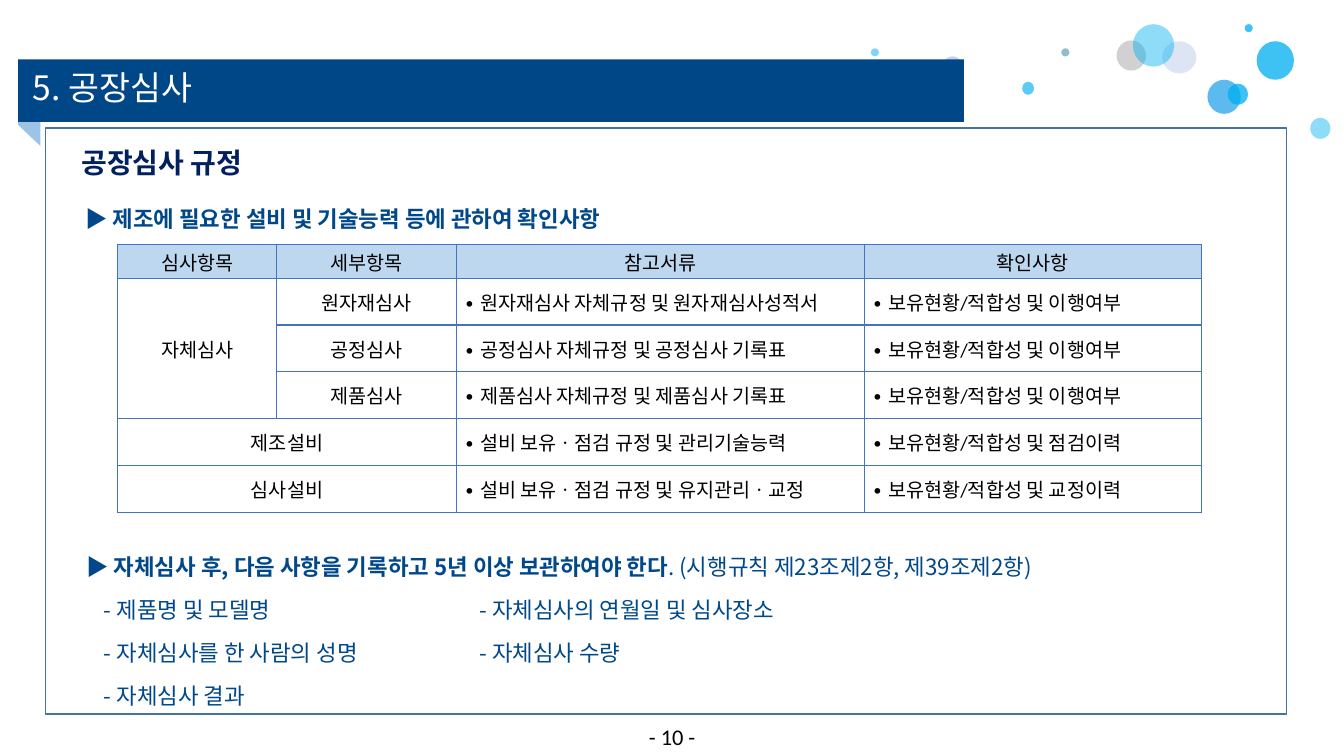
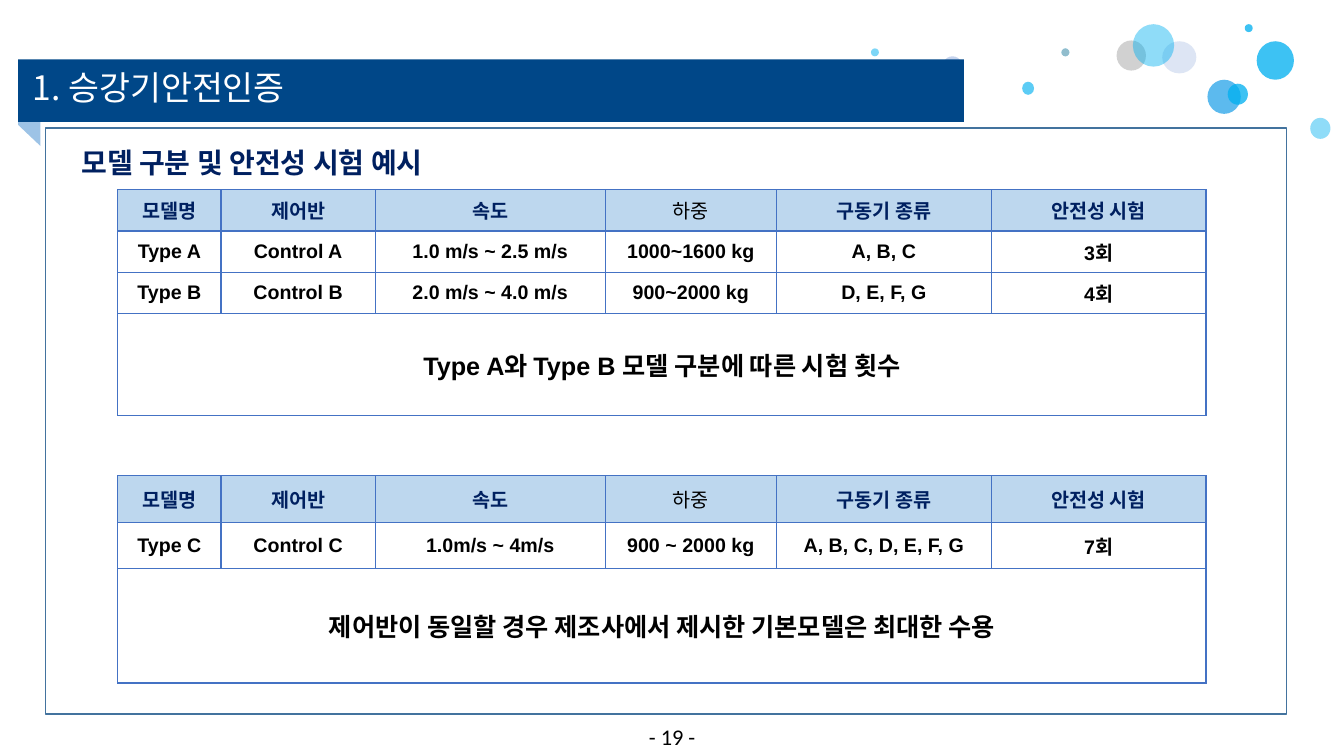
from dataclasses import dataclass, replace

from lxml.etree import SubElement
from pptx import Presentation
from pptx.dml.color import RGBColor
from pptx.enum.shapes import MSO_SHAPE
from pptx.enum.text import MSO_ANCHOR, PP_ALIGN
from pptx.oxml.ns import qn
from pptx.util import Cm, Pt


@dataclass(frozen=True)
class TextStyle:
    size: int
    color: str
    bold: bool = False
    font: str = "Noto Sans CJK KR"
    align: PP_ALIGN = PP_ALIGN.LEFT


class Theme:
    east_asian = "Noto Sans CJK KR"
    band = "004788"
    fold = "9DC3E6"
    frame = "43739E"
    grid = "4472C4"
    header = "BDD7EE"
    sky, azure, steel, gray = "00B0F0", "46B1EC", "8FAADC", "A5A5A5"

    title = TextStyle(24, "FFFFFF")
    subtitle = TextStyle(20, "002060", True)
    point = TextStyle(16, "00488A", True)
    detail = replace(point, bold=False)
    page = TextStyle(16, "000000", font="Calibri", align=PP_ALIGN.CENTER)
    label = replace(page, size=14)
    entry = replace(label, align=PP_ALIGN.JUSTIFY)
    value = replace(label, font="Arial", bold=True)
    heading = replace(value, color="002060")
    verdict = replace(value, size=18)


BUBBLES = [
    (29.29, 1.04, 0.86, 0.81, Theme.steel, 30),
    (23.75, 1.42, 0.51, 0.53, Theme.steel, 51),
    (28.14, 1.02, 0.74, 0.76, Theme.gray, 51),
    (21.95, 1.22, 0.2, 0.2, Theme.sky, 51),
    (30.43, 2.01, 0.84, 0.86, Theme.azure, 88),
    (30.94, 2.11, 0.51, 0.53, Theme.sky, 76),
    (25.76, 2.06, 0.3, 0.33, Theme.sky, 64),
    (31.67, 1.04, 0.94, 0.97, Theme.sky, 76),
    (33.02, 2.97, 0.51, 0.53, Theme.sky, 44),
    (28.55, 0.61, 1.04, 1.07, Theme.sky, 44),
    (31.37, 0.61, 0.2, 0.2, Theme.sky, 76),
    (26.75, 1.22, 0.2, 0.2, Theme.sky, 51),
    (26.75, 1.22, 0.2, 0.2, Theme.gray, 51),
]


class Deck:
    def __init__(self):
        self.presentation = Presentation()
        self.presentation.slide_width = Cm(33.87)
        self.presentation.slide_height = Cm(19.05)
        self.slide = None

    def new_slide(self, title, subtitle, page):
        self.slide = self.presentation.slides.add_slide(
            self.presentation.slide_layouts[6])
        for *box, color, opacity in BUBBLES:
            self.shape(MSO_SHAPE.OVAL, box, color, opacity=opacity)
        self.shape(MSO_SHAPE.RECTANGLE, (1.14, 3.23, 31.29, 14.76),
                   outline=Theme.frame)
        self.text((15.85, 18.11, 2.18, 0.94), [[(f"- {page} -", Theme.page)]])
        self.fold()
        self.shape(MSO_SHAPE.RECTANGLE, (0.46, 1.5, 23.83, 1.57), Theme.band)
        self.text((1.8, 3.53, 23.14, 1.12), [[(subtitle, Theme.subtitle)]])
        self.text((0.58, 1.55, 23.27, 1.27), [[(title, Theme.title)]])

    def paint(self, shape, fill=None, outline=None, opacity=100):
        shape.shadow.inherit = False
        if fill:
            shape.fill.solid()
            shape.fill.fore_color.rgb = RGBColor.from_string(fill)
        else:
            shape.fill.background()
        if outline:
            shape.line.color.rgb = RGBColor.from_string(outline)
            shape.line.width = Pt(1)
        else:
            shape.line.fill.background()
        if opacity < 100:
            color = shape.element.spPr.find(qn("a:solidFill"))[0]
            SubElement(color, qn("a:alpha"), val=str(opacity * 1000))

    def shape(self, kind, box, fill=None, outline=None, opacity=100):
        shape = self.slide.shapes.add_shape(kind, *map(Cm, box))
        self.paint(shape, fill, outline, opacity)

    def fold(self):
        corners = [(Cm(x), Cm(y)) for x, y in
                   [(0.46, 3.15), (1.02, 3.68), (1.02, 2.57), (0.46, 2.57)]]
        builder = self.slide.shapes.build_freeform(*corners[0])
        builder.add_line_segments(corners[1:], close=True)
        self.paint(builder.convert_to_shape(), Theme.fold)

    def set_parts(self, paragraph, parts):
        paragraph.text = parts[0][0]
        for text, _ in parts[1:]:
            paragraph.add_run().text = text
        paragraph.alignment = parts[0][1].align
        for run, (_, style) in zip(paragraph.runs, parts):
            run.font.size = Pt(style.size)
            run.font.bold = style.bold
            run.font.color.rgb = RGBColor.from_string(style.color)
            run.font.name = style.font
            SubElement(run._r.get_or_add_rPr(), qn("a:ea"),
                       typeface=Theme.east_asian)

    def text(self, box, paragraphs, spacing=None, indent=0, tabs=()):
        frame = self.slide.shapes.add_textbox(*map(Cm, box)).text_frame
        frame.word_wrap = True
        for index, parts in enumerate(paragraphs):
            paragraph = frame.add_paragraph() if index else frame.paragraphs[0]
            properties = paragraph._p.get_or_add_pPr()
            if parts[0][0].startswith("\t"):
                stops = SubElement(properties, qn("a:tabLst"))
                for stop in tabs:
                    SubElement(stops, qn("a:tab"), pos=str(Cm(stop)), algn="l")
            elif indent:
                properties.set("marL", str(Cm(indent)))
            self.set_parts(paragraph, parts)
            if spacing:
                paragraph.line_spacing = spacing

    def border(self, cell):
        properties = cell._tc.get_or_add_tcPr()
        for position, side in enumerate(("lnL", "lnR", "lnT", "lnB")):
            line = SubElement(properties, qn(f"a:{side}"), w=str(Pt(1)))
            properties.insert(position, line)
            fill = SubElement(line, qn("a:solidFill"))
            SubElement(fill, qn("a:srgbClr"), val=Theme.grid)

    def table(self, left, top, widths, heights, rows, merges, style_for):
        table = self.slide.shapes.add_table(
            len(heights), len(widths), Cm(left), Cm(top),
            Cm(sum(widths)), Cm(sum(heights))).table
        table.first_row = table.horz_banding = False
        for column, width in zip(table.columns, widths):
            column.width = Cm(width)
        for row, height in zip(table.rows, heights):
            row.height = Cm(height)
        for first, last in merges:
            table.cell(*first).merge(table.cell(*last))
        for r, texts in enumerate(rows):
            for c in range(len(widths)):
                cell = table.cell(r, c)
                cell.margin_left = cell.margin_right = Cm(0.18)
                cell.margin_top = cell.margin_bottom = Cm(0.05)
                cell.vertical_anchor = MSO_ANCHOR.MIDDLE
                if r == 0:
                    cell.fill.solid()
                    cell.fill.fore_color.rgb = RGBColor.from_string(Theme.header)
                else:
                    cell.fill.background()
                self.border(cell)
                if c < len(texts) and texts[c]:
                    self.set_parts(cell.text_frame.paragraphs[0],
                                   [(texts[c], style_for(r, c))])


def factory_inspection(deck):
    deck.new_slide("5. 공장심사", "공장심사 규정", 10)
    deck.text((1.7, 4.65, 29.9, 1.35),
              [[("▶ 제조에 필요한 설비 및 기술능력 등에 관하여 확인사항", Theme.point)]],
              spacing=1.6, indent=0.2)
    compliance = "∙ 보유현황/적합성 및 이행여부"
    rows = [
        ["심사항목", "세부항목", "참고서류", "확인사항"],
        ["자체심사", "원자재심사", "∙ 원자재심사 자체규정 및 원자재심사성적서", compliance],
        [None, "공정심사", "∙ 공정심사 자체규정 및 공정심사 기록표", compliance],
        [None, "제품심사", "∙ 제품심사 자체규정 및 제품심사 기록표", compliance],
        ["제조설비", None, "∙ 설비 보유ㆍ점검 규정 및 관리기술능력",
         "∙ 보유현황/적합성 및 점검이력"],
        ["심사설비", None, "∙ 설비 보유ㆍ점검 규정 및 유지관리ㆍ교정",
         "∙ 보유현황/적합성 및 교정이력"],
    ]
    deck.table(2.97, 6.17, [4, 4.53, 10.28, 8.5], [0.84] + [1.18] * 5, rows,
               [((1, 0), (3, 0)), ((4, 0), (4, 1)), ((5, 0), (5, 1))],
               lambda r, c: Theme.entry if r and c > 1 else Theme.label)
    records = [
        "\t- 제품명 및 모델명\t- 자체심사의 연월일 및 심사장소",
        "\t- 자체심사를 한 사람의 성명\t- 자체심사 수량",
        "\t- 자체심사 결과",
    ]
    rule = [("▶ 자체심사 후, 다음 사항을 기록하고 5년 이상 보관하여야 한다", Theme.point),
            (". (시행규칙 제23조제2항, 제39조제2항)", Theme.detail)]
    deck.text((1.73, 13.41, 29.9, 4.62),
              [rule] + [[(record, Theme.detail)] for record in records],
              spacing=1.6, indent=0.2, tabs=(0.64, 10.1))


def model_table(deck, top, heights, models, conclusion):
    headings = ["모델명", "제어반", "속도", "하중", "구동기 종류", "안전성 시험"]
    last = len(models) + 1

    def style_for(r, c):
        if r == 0:
            return Theme.label if headings[c] == "하중" else Theme.heading
        return Theme.verdict if r == last else Theme.value

    deck.table(2.97, top, [2.6, 3.89, 5.79, 4.32, 5.41, 5.41], heights,
               [headings, *models, [conclusion]],
               [((last, 0), (last, 5))], style_for)


def elevator_certification(deck):
    deck.new_slide("1. 승강기안전인증", "모델 구분 및 안전성 시험 예시", 19)
    model_table(deck, 4.78, [1.04, 1.04, 1.04, 2.58], [
        ["Type A", "Control A", "1.0 m/s ~ 2.5 m/s", "1000~1600 kg", "A, B, C", "3회"],
        ["Type B", "Control B", "2.0 m/s ~ 4.0 m/s", "900~2000 kg", "D, E, F, G", "4회"],
    ], "Type A와 Type B 모델 구분에 따른 시험 횟수")
    model_table(deck, 11.99, [1.17, 1.17, 2.88], [
        ["Type C", "Control C", "1.0m/s ~ 4m/s", "900 ~ 2000 kg",
         "A, B, C, D, E, F, G", "7회"],
    ], "제어반이 동일할 경우 제조사에서 제시한 기본모델은 최대한 수용")


def main():
    deck = Deck()
    factory_inspection(deck)
    elevator_certification(deck)
    deck.presentation.save("out.pptx")


if __name__ == "__main__":
    main()
